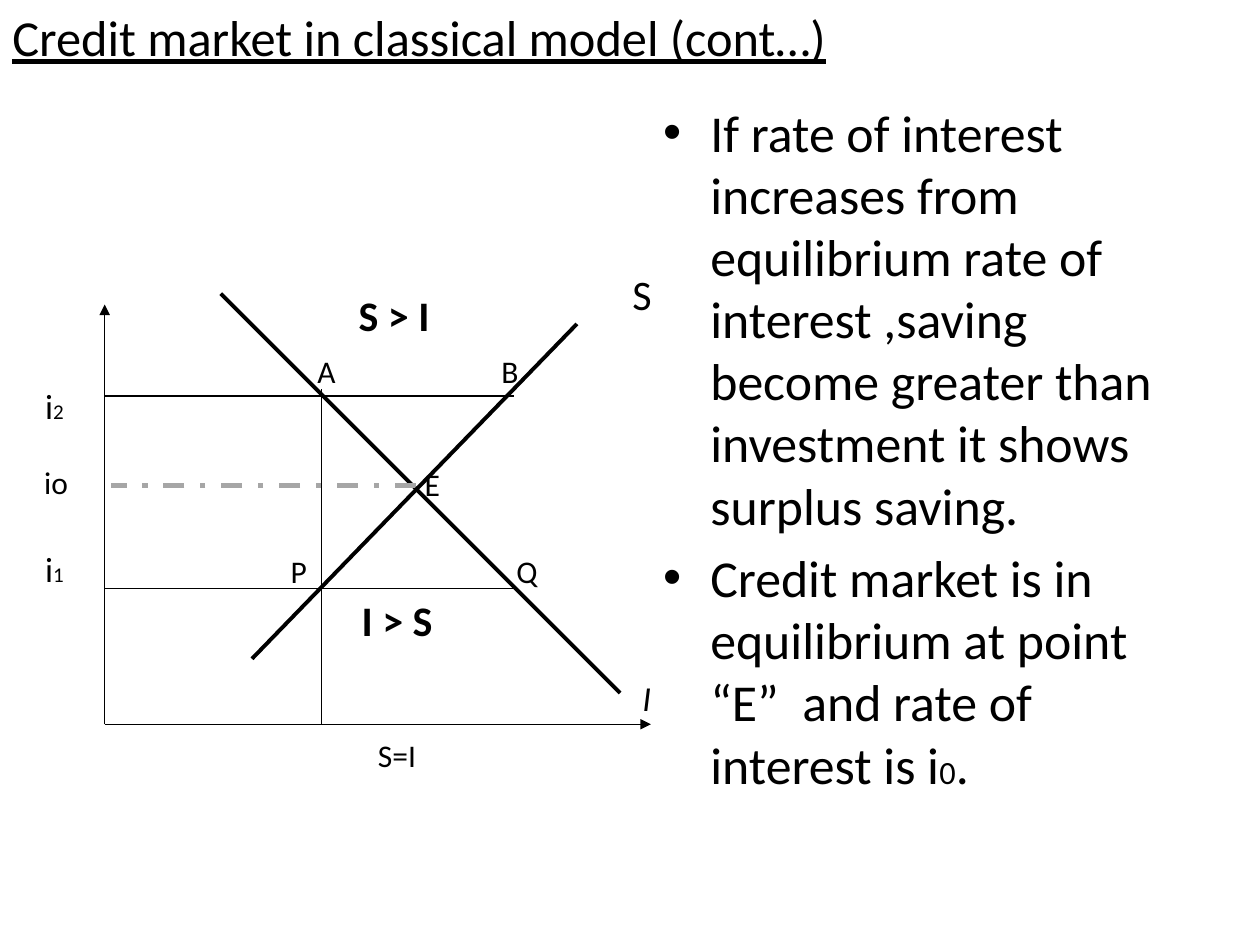
from lxml.etree import SubElement
from pptx import Presentation
from pptx.dml.color import RGBColor
from pptx.enum.dml import MSO_LINE
from pptx.enum.shapes import MSO_CONNECTOR
from pptx.enum.text import MSO_ANCHOR
from pptx.oxml.ns import qn
from pptx.util import Cm, Pt

BLACK = "000000"
GREY = "A6A6A6"
FONT = "Calibri"
AXIS_LEFT, AXIS_BOTTOM = 2.11, 14.6
HIGH_RATE, EQUILIBRIUM_RATE, LOW_RATE = 7.98, 9.78, 11.86
QUANTITY = 6.48


def color(value):
    """Turn a hex string into a colour."""
    return RGBColor.from_string(value)


def add_line(page, start, end, width=0.75, shade=BLACK, dash=None, arrow=False):
    """Draw a straight line, optionally dashed or with an arrowhead at its end."""
    line = page.shapes.add_connector(
        MSO_CONNECTOR.STRAIGHT, *(Cm(value) for value in (*start, *end)))
    line.line.width = Pt(width)
    line.line.color.rgb = color(shade)
    if dash:
        line.line.dash_style = dash
    properties = line._element.spPr
    if arrow:
        SubElement(properties.find(qn("a:ln")), qn("a:tailEnd"), type="triangle")
    SubElement(properties, qn("a:effectLst"))


def add_span(paragraph, text, size, bold=False, italic=False, underline=False):
    """Append one formatted run to a paragraph."""
    span = paragraph.add_run()
    span.text = text
    font = span.font
    font.name, font.size, font.color.rgb = FONT, Pt(size), color(BLACK)
    font.bold, font.italic, font.underline = bold, italic, underline


def add_box(page, left, top, width, height):
    """Place an empty wrapping text box and return its text frame."""
    box = page.shapes.add_textbox(Cm(left), Cm(top), Cm(width), Cm(height))
    box.text_frame.word_wrap = True
    return box.text_frame


def add_label(page, left, top, text, size=18, subscript="", width=1.5, **style):
    """Write a short diagram label with an optional small index."""
    paragraph = add_box(page, left, top, width, 1.02).paragraphs[0]
    add_span(paragraph, text, size, **style)
    if subscript:
        add_span(paragraph, subscript, 12)


def add_title(page, text):
    """Write the underlined heading."""
    frame = add_box(page, 0, 0, 18.84, 1.48)
    frame.vertical_anchor = MSO_ANCHOR.MIDDLE
    add_span(frame.paragraphs[0], text, 28.8, underline=True)


def add_bullets(page, items):
    """Write the bulleted explanation, each item being a list of sized spans."""
    frame = add_box(page, 13.12, 1.9, 11, 15.1)
    for index, spans in enumerate(items):
        paragraph = frame.add_paragraph() if index else frame.paragraphs[0]
        paragraph.space_before = Pt(5.9)
        properties = paragraph._p.get_or_add_pPr()
        properties.set("marL", str(Cm(0.95)))
        properties.set("indent", str(Cm(-0.95)))
        SubElement(properties, qn("a:buFont"), typeface="Arial")
        SubElement(properties, qn("a:buChar"), char="•")
        for text, size in spans:
            add_span(paragraph, text, size)


def add_diagram(page):
    """Draw the axes, the saving and investment curves and the rate levels."""
    origin = (AXIS_LEFT, AXIS_BOTTOM)
    for end in ((13.12, AXIS_BOTTOM), (AXIS_LEFT, 6.14)):
        add_line(page, origin, end, arrow=True)
    add_line(page, (4.45, 5.92), (12.5, 13.97), width=2.25)
    add_line(page, (8.38, EQUILIBRIUM_RATE), (2.24, EQUILIBRIUM_RATE),
             width=3, shade=GREY, dash=MSO_LINE.DASH_DOT)
    for rate in (HIGH_RATE, LOW_RATE):
        add_line(page, (AXIS_LEFT, rate), (10.36, rate))
    add_line(page, (QUANTITY, 7.85), (QUANTITY, AXIS_BOTTOM))
    add_line(page, (11.63, 6.53), (5.08, 13.28), width=2.25)


def add_labels(page):
    """Name the rates, curves, points and areas of the diagram."""
    add_label(page, 0.64, 9.2, "io")
    add_label(page, 0.66, 10.92, "i", 20, "1")
    add_label(page, 0.66, 7.62, "i", 20, "2")
    add_label(page, 12.7, 13.51, "I", 20, italic=True)
    add_label(page, 12.5, 5.28, "S", 24)
    for left, top, text in ((6.15, 6.98, "A"), (9.86, 6.98, "B"),
                            (5.61, 11, "P"), (10.16, 11, "Q"),
                            (8.31, 9.25, "E"), (7.37, 14.71, "S=I")):
        add_label(page, left, top, text)
    for left, top, text in ((6.98, 5.72, "S > I"), (7.04, 11.86, "I > S")):
        add_label(page, left, top, text, 24, width=2.29, bold=True)


def main():
    """Build the slide and save it."""
    deck = Presentation()
    deck.slide_width, deck.slide_height = Cm(25.4), Cm(19.05)
    page = deck.slides.add_slide(deck.slide_layouts[6])
    add_diagram(page)
    add_labels(page)
    add_title(page, "Credit market in classical model (cont…)")
    add_bullets(page, [
        [("If rate of interest increases from equilibrium rate of interest "
          ",saving become greater than investment it shows surplus saving.", 29.6)],
        [("Credit market is in equilibrium at point “E”  and rate of interest is i",
          29.6), ("0", 18.5), (".", 29.6)],
    ])
    deck.save("out.pptx")


if __name__ == "__main__":
    main()
